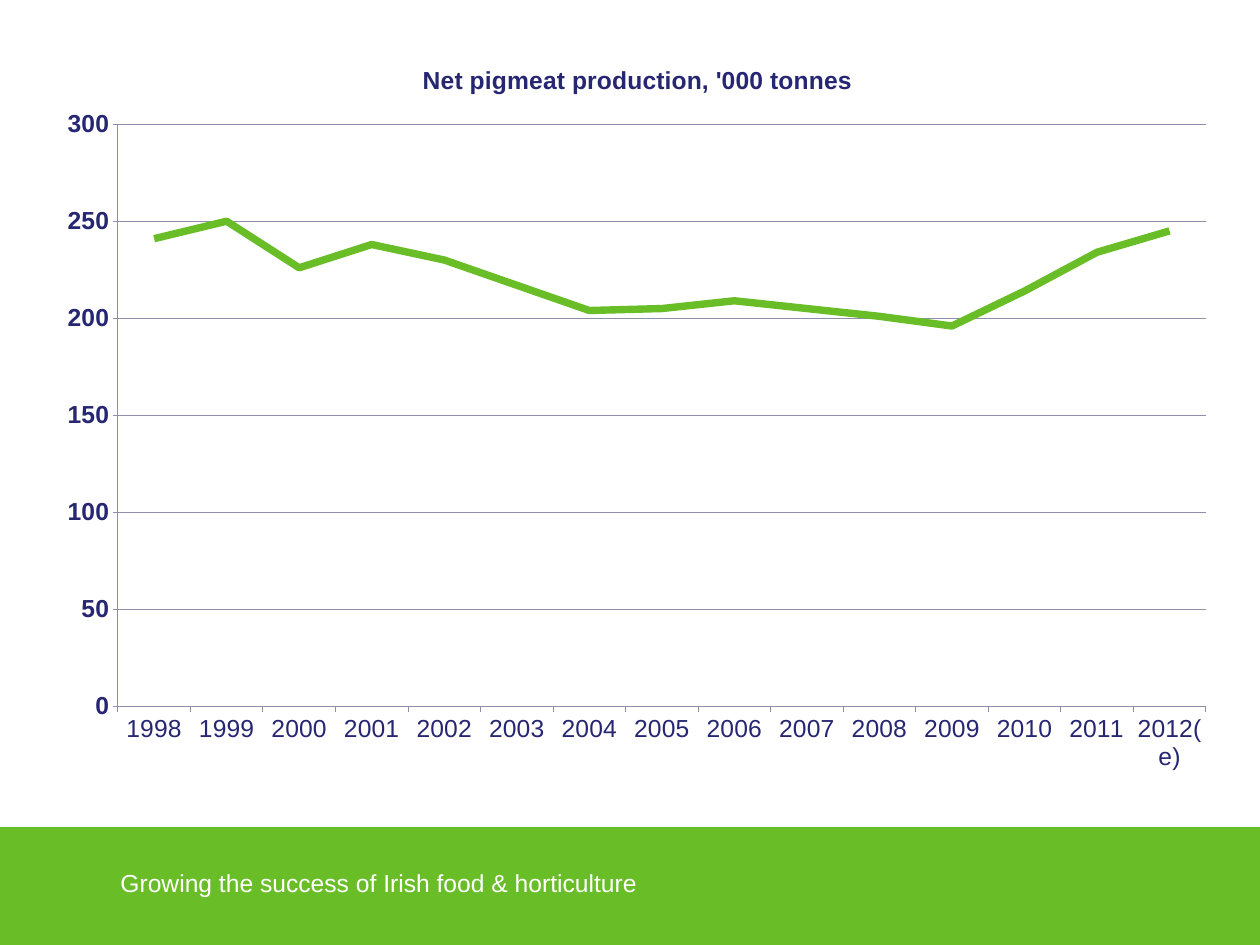
from dataclasses import dataclass

from lxml.etree import SubElement
from pptx import Presentation
from pptx.chart.data import CategoryChartData
from pptx.dml.color import RGBColor
from pptx.enum.chart import XL_CHART_TYPE, XL_MARKER_STYLE, XL_TICK_MARK
from pptx.enum.shapes import MSO_SHAPE
from pptx.oxml.ns import qn
from pptx.util import Inches, Pt


@dataclass(frozen=True)
class Theme:
    """Colours and type sizes of the slide."""
    green: RGBColor = RGBColor(0x69, 0xBE, 0x28)
    navy: RGBColor = RGBColor(0x26, 0x26, 0x72)
    grid: RGBColor = RGBColor(0x8E, 0x8E, 0xAA)
    white: RGBColor = RGBColor(0xFF, 0xFF, 0xFF)
    face: str = "Arial"
    size: Pt = Pt(20)
    thin: Pt = Pt(0.75)
    thick: Pt = Pt(6)


THEME = Theme()
WIDTH, HEIGHT = 14.22, 10.67
TITLE = "Net pigmeat production, '000 tonnes"
YEARS = [str(year) for year in range(1998, 2012)] + ["2012(e)"]
TONNES = [241, 250, 226, 238, 230, 217, 204, 205, 209, 205, 201, 196, 214, 234, 245]


def set_font(font, color, bold=False):
    """Give a font the slide's face and size."""
    font.name, font.size, font.bold = THEME.face, THEME.size, bold
    font.color.rgb = color


def set_line(line, color, width):
    """Draw a line in one colour and width."""
    line.color.rgb = color
    line.width = width


def set_plot(chart, **parts):
    """Fix the inner plot area as fractions of the chart."""
    area = chart.element.find(".//" + qn("c:plotArea"))
    for old in area.findall(qn("c:layout")):
        area.remove(old)
    layout = SubElement(area, qn("c:layout"))
    area.insert(0, layout)
    manual = SubElement(layout, qn("c:manualLayout"))
    rules = {"layoutTarget": "inner", "xMode": "edge", "yMode": "edge", **parts}
    for name, value in rules.items():
        SubElement(manual, qn("c:" + name)).set("val", str(value))


def add_graph(slide, left, top, width, height):
    """Place the line chart of pigmeat output in its box."""
    data = CategoryChartData()
    data.categories = YEARS
    data.add_series("Series 1", TONNES)
    chart = slide.shapes.add_chart(
        XL_CHART_TYPE.LINE, Inches(left), Inches(top), Inches(width), Inches(height), data
    ).chart
    set_font(chart.font, THEME.navy)
    chart.has_legend = False
    chart.has_title = True
    head = chart.chart_title.text_frame
    head.text = TITLE
    set_font(head.paragraphs[0].runs[0].font, THEME.navy, True)
    set_plot(chart, x=0.062, y=0.113, w=0.917, h=0.78)

    for axis, bold in ((chart.category_axis, False), (chart.value_axis, True)):
        set_font(axis.tick_labels.font, THEME.navy, bold)
        set_line(axis.format.line, THEME.grid, THEME.thin)
        axis.major_tick_mark = XL_TICK_MARK.OUTSIDE
        axis.minor_tick_mark = XL_TICK_MARK.NONE
    scale = chart.value_axis
    scale.minimum_scale, scale.maximum_scale, scale.major_unit = 0, 300, 50
    scale.has_major_gridlines = True
    set_line(scale.major_gridlines.format.line, THEME.grid, THEME.thin)

    plot = chart.plots[0]
    plot.vary_by_categories = False
    trend = plot.series[0]
    trend.smooth = False
    trend.marker.style = XL_MARKER_STYLE.NONE
    set_line(trend.format.line, THEME.green, THEME.thick)


def add_foot(slide, left, top, width, height):
    """Place the green band and its motto in its box."""
    band = slide.shapes.add_shape(
        MSO_SHAPE.RECTANGLE, Inches(left), Inches(top), Inches(width), Inches(height)
    )
    band.shadow.inherit = False
    band.fill.solid()
    band.fill.fore_color.rgb = THEME.green
    band.line.fill.background()
    frame = slide.shapes.add_textbox(
        Inches(left + 1.3), Inches(top + 0.4), Inches(7.94), Inches(0.46)
    ).text_frame
    frame.word_wrap = True
    frame.margin_left = frame.margin_right = Inches(0.06)
    frame.margin_top = frame.margin_bottom = Inches(0.06)
    frame.text = "Growing the success of Irish food & horticulture"
    set_font(frame.paragraphs[0].runs[0].font, THEME.white)


def main():
    """Build the slide and save it."""
    deck = Presentation()
    deck.slide_width, deck.slide_height = Inches(WIDTH), Inches(HEIGHT)
    slide = deck.slides.add_slide(deck.slide_layouts[6])
    add_foot(slide, 0, 9.34, WIDTH, 1.33)
    add_graph(slide, 0.5, 0.45, 13.39, 8.43)
    deck.save("out.pptx")


if __name__ == "__main__":
    main()
